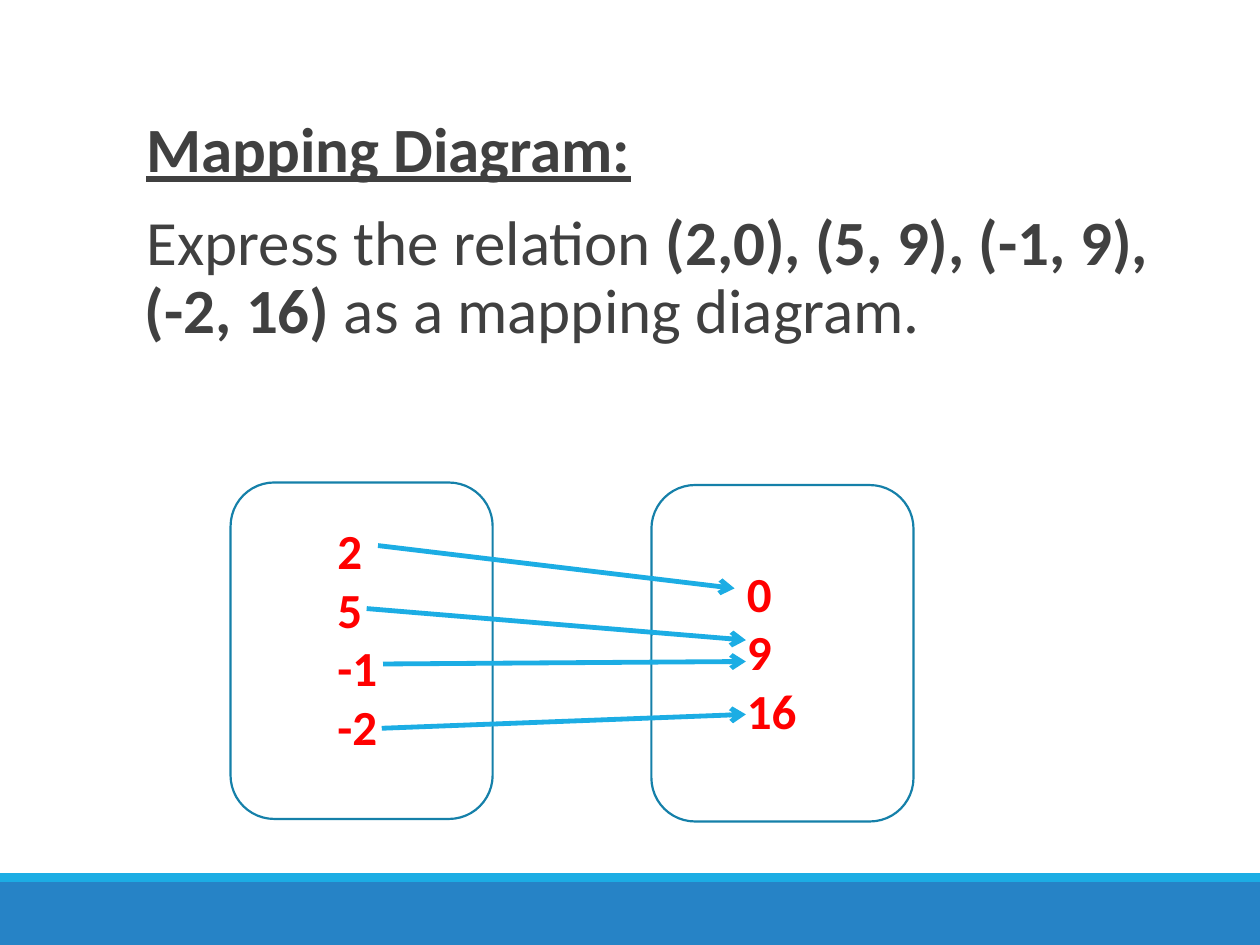
from typing import NamedTuple

from lxml.etree import SubElement
from pptx import Presentation
from pptx.dml.color import RGBColor
from pptx.enum.shapes import MSO_CONNECTOR, MSO_SHAPE
from pptx.enum.text import MSO_ANCHOR, MSO_AUTO_SIZE
from pptx.oxml.ns import qn
from pptx.util import Inches, Pt

BLUE = RGBColor(0x26, 0x83, 0xC6)
SKY = RGBColor(0x1C, 0xAD, 0xE4)
OUTLINE = RGBColor(0x15, 0x80, 0xA9)
GRAY = RGBColor(0x40, 0x40, 0x40)
RED = RGBColor(0xFF, 0x00, 0x00)
FONT = "Calibri"


class Band(NamedTuple):
    top: float
    height: float
    color: RGBColor


class ValueSet(NamedTuple):
    left: float
    top: float
    values_left: float
    values_top: float
    values: list[str]


class Mapping(NamedTuple):
    start: tuple[float, float]
    end: tuple[float, float]


class Phrase(NamedTuple):
    text: str
    bold: bool = False
    underline: bool = False


BANDS = [Band(7, 0.5, BLUE), Band(6.93, 0.07, SKY)]
QUESTION = [
    [Phrase("Mapping Diagram:", bold=True, underline=True)],
    [
        Phrase("Express the relation "),
        Phrase("(2,0), (5, 9), (-1, 9), (-2, 16) ", bold=True),
        Phrase("as a mapping diagram."),
    ],
]
VALUE_SETS = [
    ValueSet(1.83, 3.83, 2.58, 4.08, ["2", "5", "-1", "-2"]),
    ValueSet(5.17, 3.85, 5.83, 4.42, ["0", "9", "16"]),
]
MAPPINGS = [
    Mapping((3, 4.33), (5.83, 4.67)),
    Mapping((2.91, 4.83), (5.92, 5.08)),
    Mapping((3.04, 5.27), (5.92, 5.25)),
    Mapping((3.03, 5.78), (5.92, 5.67)),
]


def style_run(run, size: float, color: RGBColor, bold: bool) -> None:
    run.font.name = FONT
    run.font.size = Pt(size)
    run.font.color.rgb = color
    run.font.bold = bold


def draw_band(slide, band: Band) -> None:
    stripe = slide.shapes.add_shape(
        MSO_SHAPE.RECTANGLE, 0, Inches(band.top), Inches(10), Inches(band.height)
    )
    stripe.shadow.inherit = False
    stripe.fill.solid()
    stripe.fill.fore_color.rgb = band.color
    stripe.line.fill.background()


def indent_with_blank_bullet(paragraph) -> None:
    properties = paragraph._p.get_or_add_pPr()
    properties.set("marL", str(Inches(0.1)))
    properties.set("indent", str(Inches(-0.1)))
    bullet_color = SubElement(properties, qn("a:buClr"))
    SubElement(bullet_color, qn("a:srgbClr"), val=str(SKY))
    SubElement(properties, qn("a:buFont"), typeface=FONT)
    SubElement(properties, qn("a:buChar"), char=" ")


def draw_question(slide, paragraphs: list[list[Phrase]]) -> None:
    question = slide.shapes.add_textbox(
        Inches(1.05), Inches(0.89), Inches(8.25), Inches(4.4)
    )
    frame = question.text_frame
    frame.word_wrap = True
    frame.vertical_anchor = MSO_ANCHOR.TOP
    frame.margin_left = frame.margin_right = 0
    for index, phrases in enumerate(paragraphs):
        paragraph = frame.add_paragraph() if index else frame.paragraphs[0]
        paragraph.line_spacing = 0.9
        paragraph.space_before = Pt(12)
        paragraph.space_after = Pt(2)
        indent_with_blank_bullet(paragraph)
        for phrase in phrases:
            run = paragraph.add_run()
            run.text = phrase.text
            style_run(run, 36, GRAY, phrase.bold)
            run.font.underline = phrase.underline


def draw_set_outline(slide, value_set: ValueSet) -> None:
    outline = slide.shapes.add_shape(
        MSO_SHAPE.ROUNDED_RECTANGLE,
        Inches(value_set.left),
        Inches(value_set.top),
        Inches(2.08),
        Inches(2.67),
    )
    outline.shadow.inherit = False
    outline.fill.background()
    outline.line.color.rgb = OUTLINE
    outline.line.width = Pt(1.25)


def draw_set_values(slide, value_set: ValueSet) -> None:
    values = slide.shapes.add_textbox(
        Inches(value_set.values_left),
        Inches(value_set.values_top),
        Inches(1.83),
        Inches(1.99),
    )
    frame = values.text_frame
    frame.word_wrap = True
    frame.auto_size = MSO_AUTO_SIZE.SHAPE_TO_FIT_TEXT
    frame.text = "\n".join(value_set.values)
    for paragraph in frame.paragraphs:
        for run in paragraph.runs:
            style_run(run, 28, RED, True)


def draw_mapping(slide, mapping: Mapping) -> None:
    arrow = slide.shapes.add_connector(
        MSO_CONNECTOR.STRAIGHT,
        *(Inches(value) for value in mapping.start + mapping.end),
    )
    arrow.line.color.rgb = SKY
    arrow.line.width = Pt(2.75)
    SubElement(arrow.line._get_or_add_ln(), qn("a:tailEnd"), type="arrow")
    SubElement(arrow._element.spPr, qn("a:effectLst"))


def main() -> None:
    presentation = Presentation()
    presentation.slide_width = Inches(10)
    presentation.slide_height = Inches(7.5)
    slide = presentation.slides.add_slide(presentation.slide_layouts[6])
    for band in BANDS:
        draw_band(slide, band)
    draw_question(slide, QUESTION)
    for value_set in VALUE_SETS:
        draw_set_outline(slide, value_set)
    for value_set in VALUE_SETS:
        draw_set_values(slide, value_set)
    for mapping in MAPPINGS:
        draw_mapping(slide, mapping)
    presentation.save("out.pptx")


if __name__ == "__main__":
    main()
